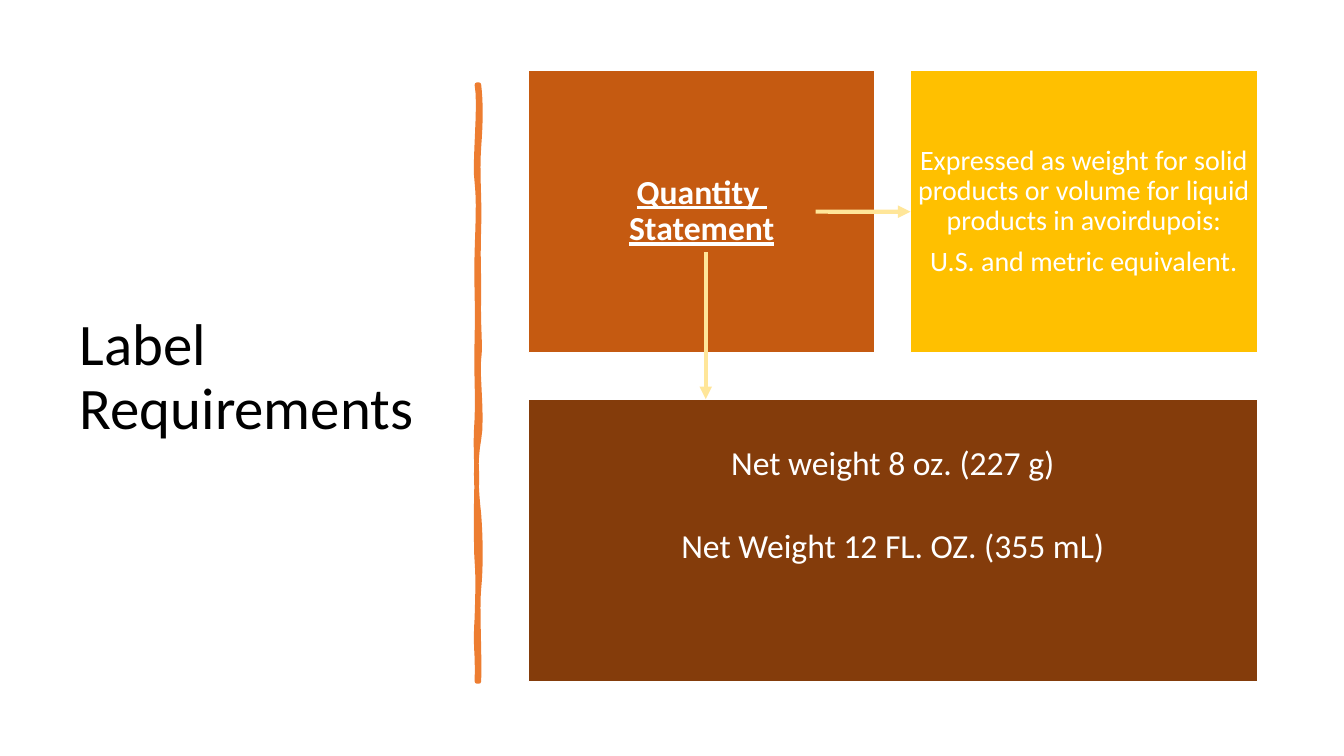
from pptx import Presentation
from pptx.dml.color import RGBColor
from pptx.enum.shapes import MSO_CONNECTOR, MSO_SHAPE
from pptx.enum.text import MSO_ANCHOR, MSO_AUTO_SIZE, PP_ALIGN
from pptx.oxml.ns import qn
from pptx.util import Inches, Pt
from lxml.etree import SubElement

FONT = "Calibri"
COLORS = {
    "title": "000000", "white": "FFFFFF", "divider": "ED7D31",
    "statement": "C55A11", "rule": "FFC000", "examples": "843C0B",
    "arrow": "FFE699",
}

# Block grid
LEFT, TOP = 5.24, 0.7
BLOCK_W, BLOCK_H = 3.44, 2.8
COL_GAP, ROW_GAP = 0.35, 0.46
RIGHT = LEFT + BLOCK_W + COL_GAP
LOWER = TOP + BLOCK_H + ROW_GAP

# Hand-drawn divider: a start point, then curves as two handles and an end
DIVIDER_START = (4.75, 0.84)
DIVIDER_CURVES = [
    (4.77, 1.02, 4.77, 1.19, 4.75, 1.46), (4.73, 1.73, 4.76, 1.95, 4.75, 2.26),
    (4.74, 2.57, 4.75, 2.62, 4.75, 2.94), (4.74, 3.25, 4.77, 3.42, 4.75, 3.56),
    (4.73, 3.70, 4.79, 4.14, 4.75, 4.36), (4.71, 4.57, 4.72, 4.84, 4.75, 5.10),
    (4.77, 5.36, 4.77, 5.64, 4.75, 5.84), (4.73, 6.03, 4.76, 6.50, 4.75, 6.76),
    (4.74, 6.76, 4.73, 6.76, 4.73, 6.76), (4.74, 6.46, 4.71, 6.44, 4.73, 6.13),
    (4.74, 5.83, 4.74, 5.70, 4.73, 5.57), (4.72, 5.44, 4.72, 4.95, 4.73, 4.77),
    (4.73, 4.59, 4.71, 4.45, 4.73, 4.15), (4.74, 3.86, 4.72, 3.73, 4.73, 3.35),
    (4.74, 2.98, 4.72, 2.81, 4.73, 2.50), (4.74, 2.18, 4.75, 2.00, 4.73, 1.81),
    (4.70, 1.63, 4.77, 1.04, 4.73, 0.84),
]


def color(name):
    return RGBColor.from_string(COLORS[name])


def add_run(paragraph, text, size, ink, strong=False):
    run = paragraph.add_run()
    run.text = text
    font = run.font
    font.name, font.size = FONT, Pt(size)
    font.color.rgb = color(ink)
    if strong:
        font.bold = font.underline = True


def add_title(slide, text):
    title = slide.shapes.title
    title.left, title.top = Inches(0.69), Inches(0.7)
    title.width, title.height = Inches(3.74), Inches(6.11)
    frame = title.text_frame
    frame.word_wrap = True
    frame.auto_size = MSO_AUTO_SIZE.NONE
    frame.vertical_anchor = MSO_ANCHOR.MIDDLE
    paragraph = frame.paragraphs[0]
    paragraph.alignment = PP_ALIGN.LEFT
    paragraph.line_spacing = 0.9
    add_run(paragraph, text, 42, "title")


def curve_points(start, curves, steps=8):
    """Points along a chain of cubic curves."""
    x0, y0 = start
    for x1, y1, x2, y2, x3, y3 in curves:
        for step in range(1, steps + 1):
            t = step / steps
            u = 1 - t
            weights = (u ** 3, 3 * u * u * t, 3 * u * t * t, t ** 3)
            yield tuple(
                Inches(sum(w * v for w, v in zip(weights, values)))
                for values in ((x0, x1, x2, x3), (y0, y1, y2, y3))
            )
        x0, y0 = x3, y3


def add_divider(slide):
    builder = slide.shapes.build_freeform(*map(Inches, DIVIDER_START))
    builder.add_line_segments(curve_points(DIVIDER_START, DIVIDER_CURVES))
    divider = builder.convert_to_shape()
    divider.shadow.inherit = False
    divider.fill.solid()
    divider.fill.fore_color.rgb = color("divider")
    divider.line.color.rgb = color("divider")
    divider.line.width = Pt(3.25)


def add_block(slide, left, top, width, fill, paragraphs, size, gap,
              strong=False, top_inset=None):
    """Filled block; each paragraph is a list of lines."""
    block = slide.shapes.add_shape(
        MSO_SHAPE.RECTANGLE, Inches(left), Inches(top), Inches(width), Inches(BLOCK_H))
    block.shadow.inherit = False
    block.fill.solid()
    block.fill.fore_color.rgb = color(fill)
    block.line.color.rgb = color("white")
    block.line.width = Pt(1)

    frame = block.text_frame
    frame.word_wrap = True
    frame.margin_left = frame.margin_right = frame.margin_bottom = Inches(0.05)
    frame.margin_top = Inches(top_inset or 0.05)
    frame.vertical_anchor = MSO_ANCHOR.TOP if top_inset else MSO_ANCHOR.MIDDLE
    for index, lines in enumerate(paragraphs):
        paragraph = frame.add_paragraph() if index else frame.paragraphs[0]
        paragraph.alignment = PP_ALIGN.CENTER
        paragraph.line_spacing = 0.9
        paragraph.space_after = Pt(gap)
        for number, line in enumerate(lines):
            if number:
                paragraph.add_line_break()
            add_run(paragraph, line, size, "white", strong)
    return block


def add_arrow(slide, start, end):
    arrow = slide.shapes.add_connector(
        MSO_CONNECTOR.STRAIGHT, *map(Inches, start + end))
    arrow.line.color.rgb = color("arrow")
    arrow.line.width = Pt(3)
    SubElement(arrow.line._get_or_add_ln(), qn("a:tailEnd"), type="triangle")
    SubElement(arrow._element.spPr, qn("a:effectLst"))
    return arrow


def main():
    deck = Presentation()
    deck.slide_width, deck.slide_height = Inches(13.33), Inches(7.5)
    slide = deck.slides.add_slide(deck.slide_layouts[5])

    # Title and divider
    add_title(slide, "Label Requirements")
    add_divider(slide)

    # Statement, its rule and the examples
    add_block(slide, LEFT, TOP, BLOCK_W, "statement",
              [["Quantity ", "Statement"]], 24, 8, strong=True)
    rule = add_block(
        slide, RIGHT, TOP, BLOCK_W, "rule",
        [["Expressed as weight for solid products or volume for liquid "
          "products in avoirdupois:"],
         ["U.S. and metric equivalent."]], 20, 7)
    add_block(slide, LEFT, LOWER, 2 * BLOCK_W + COL_GAP, "examples",
              [["Net weight 8 oz. (227 g)"], ["Net Weight 12 FL. OZ. (355 mL)"]],
              24, 33, top_inset=0.47)

    # Arrows from the statement
    to_rule = add_arrow(slide, (8.09, TOP + BLOCK_H / 2), (RIGHT, TOP + BLOCK_H / 2))
    to_rule.end_connect(rule, 1)
    add_arrow(slide, (7, 2.5), (7, LOWER))

    deck.save("out.pptx")


if __name__ == "__main__":
    main()
